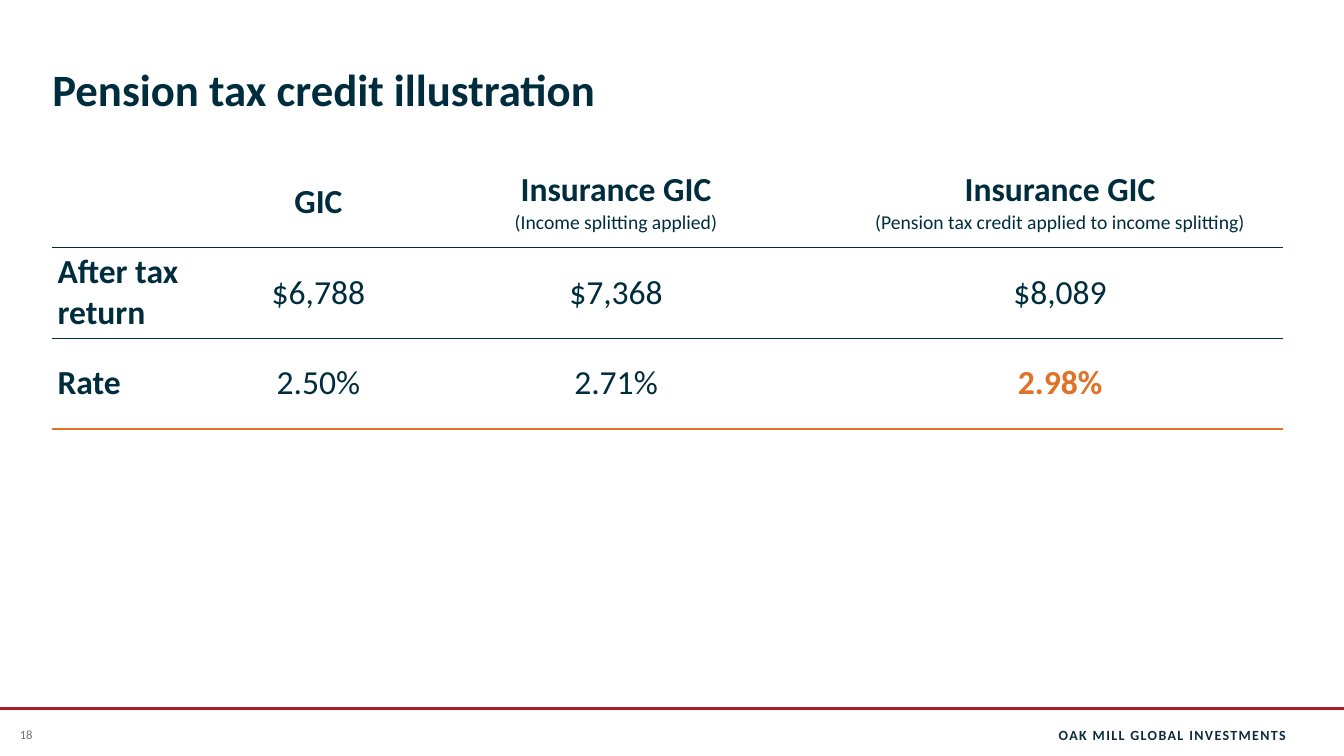
"""Build the pension tax credit illustration slide."""
from dataclasses import dataclass

from lxml.etree import SubElement
from pptx import Presentation
from pptx.dml.color import RGBColor as RGB
from pptx.enum.shapes import MSO_CONNECTOR
from pptx.enum.text import MSO_ANCHOR as ANCHOR, PP_ALIGN as ALIGN
from pptx.oxml import parse_xml
from pptx.oxml.ns import nsdecls, qn
from pptx.util import Cm, Pt


@dataclass(frozen=True)
class Theme:
    font: str = "Calibri"
    navy: str = "002D3D"
    footer: str = "0D2B3C"
    orange: str = "DF7227"
    red: str = "A91E22"
    grey: str = "767171"
    white: str = "FFFFFF"
    title_size: float = 32
    cell_size: float = 24
    note_size: float = 14
    footer_size: float = 10
    number_size: float = 9


T = Theme()

TITLE = "Pension tax credit illustration"
FOOTER = "OAK MILL GLOBAL INVESTMENTS"
NUMBER = "18"
HEADERS = [
    [],
    ["GIC"],
    ["Insurance GIC", "(Income splitting applied)"],
    ["Insurance GIC", "(Pension tax credit applied to income splitting)"],
]
ROWS = [
    ("After tax return", "$6,788", "$7,368", "$8,089"),
    ("Rate", "2.50%", "2.71%", "2.98%"),
]
HIGHLIGHT = "2.98%"

SLIDE_W, SLIDE_H = 33.87, 19.05
MARGIN = 1.32
CONTENT_W = 30.99
TABLE_TOP = 3.94
ROW_H = 2.29
COL_WIDTHS = (4.8, 3.81, 11.19, 11.19)
FOOTER_LINE_Y = 17.86
FOOTER_TOP, FOOTER_H = 18.01, 1.02
WHITE_RULE = (T.white, 1)
RULES = [WHITE_RULE, (T.navy, 0.5), (T.navy, 0.5), (T.orange, 1)]


def add_run(p, text, size, color, bold=False):
    r = p.add_run()
    r.text = text
    f = r.font
    f.name, f.size, f.bold = T.font, Pt(size), bold
    f.color.rgb = RGB.from_string(color)
    return r


def add_text(s, box, text, size, color, bold, align, anchor, insets):
    sp = s.shapes.add_textbox(*map(Cm, box))
    tf = sp.text_frame
    tf.word_wrap = True
    tf.vertical_anchor = anchor
    tf.margin_left, tf.margin_top, tf.margin_right, tf.margin_bottom = map(Cm, insets)
    p = tf.paragraphs[0]
    p.alignment = align
    return add_run(p, text, size, color, bold)


def set_borders(cell, top, bottom):
    tcPr = cell._tc.get_or_add_tcPr()
    sides = {"lnL": WHITE_RULE, "lnR": WHITE_RULE, "lnT": top, "lnB": bottom}
    for i, (tag, (color, width)) in enumerate(sides.items()):
        ln = parse_xml(f'<a:{tag} {nsdecls("a")} w="{Pt(width)}"/>')
        fill = SubElement(ln, qn("a:solidFill"))
        SubElement(fill, qn("a:srgbClr"), val=color)
        tcPr.insert(i, ln)


def fill_cell(cell, lines, align, bold, color):
    cell.fill.background()
    cell.vertical_anchor = ANCHOR.MIDDLE
    cell.margin_left = cell.margin_right = Cm(0.13)
    cell.margin_top = cell.margin_bottom = Cm(0)
    tf = cell.text_frame
    for i, line in enumerate(lines):
        p = tf.add_paragraph() if i else tf.paragraphs[0]
        p.alignment = align
        add_run(p, line, T.note_size if i else T.cell_size, color, bold and not i)


def add_returns_table(s):
    grid = [HEADERS] + [[[value] for value in row] for row in ROWS]
    frame = s.shapes.add_table(len(grid), len(COL_WIDTHS), Cm(MARGIN), Cm(TABLE_TOP),
                               Cm(CONTENT_W), Cm(ROW_H * len(grid)))
    table = frame.table
    table.first_row = table.horz_banding = False
    for column, width in zip(table.columns, COL_WIDTHS):
        column.width = Cm(width)
    for i, row in enumerate(grid):
        table.rows[i].height = Cm(ROW_H)
        for j, lines in enumerate(row):
            cell = table.cell(i, j)
            marked = HIGHLIGHT in lines
            fill_cell(cell, lines, ALIGN.CENTER if j else ALIGN.LEFT,
                      i == 0 or j == 0 or marked, T.orange if marked else T.navy)
            set_borders(cell, RULES[i], RULES[i + 1])


def add_footer(s):
    line = s.shapes.add_connector(MSO_CONNECTOR.STRAIGHT, Cm(0), Cm(FOOTER_LINE_Y),
                                  Cm(SLIDE_W), Cm(FOOTER_LINE_Y))
    line.line.color.rgb = RGB.from_string(T.red)
    line.line.width = Pt(2.25)
    SubElement(line._element.spPr, qn("a:effectLst"))
    r = add_text(s, (24.56, FOOTER_TOP, 7.85, FOOTER_H), FOOTER, T.footer_size, T.footer,
                 True, ALIGN.RIGHT, ANCHOR.MIDDLE, (0, 0.2, 0, 0.2))
    r.font._element.set("spc", "100")
    add_text(s, (0, FOOTER_TOP, MARGIN, FOOTER_H), NUMBER, T.number_size, T.grey,
             False, ALIGN.CENTER, ANCHOR.MIDDLE, (0.25, 0.13, 0.25, 0.13))


def main():
    prs = Presentation()
    prs.slide_width, prs.slide_height = Cm(SLIDE_W), Cm(SLIDE_H)
    s = prs.slides.add_slide(prs.slide_layouts[6])
    add_footer(s)
    add_returns_table(s)
    add_text(s, (MARGIN, 0, CONTENT_W, 2.9), TITLE, T.title_size, T.navy,
             True, ALIGN.LEFT, ANCHOR.BOTTOM, (0, 0, 0, 0))
    prs.save("out.pptx")


if __name__ == "__main__":
    main()
